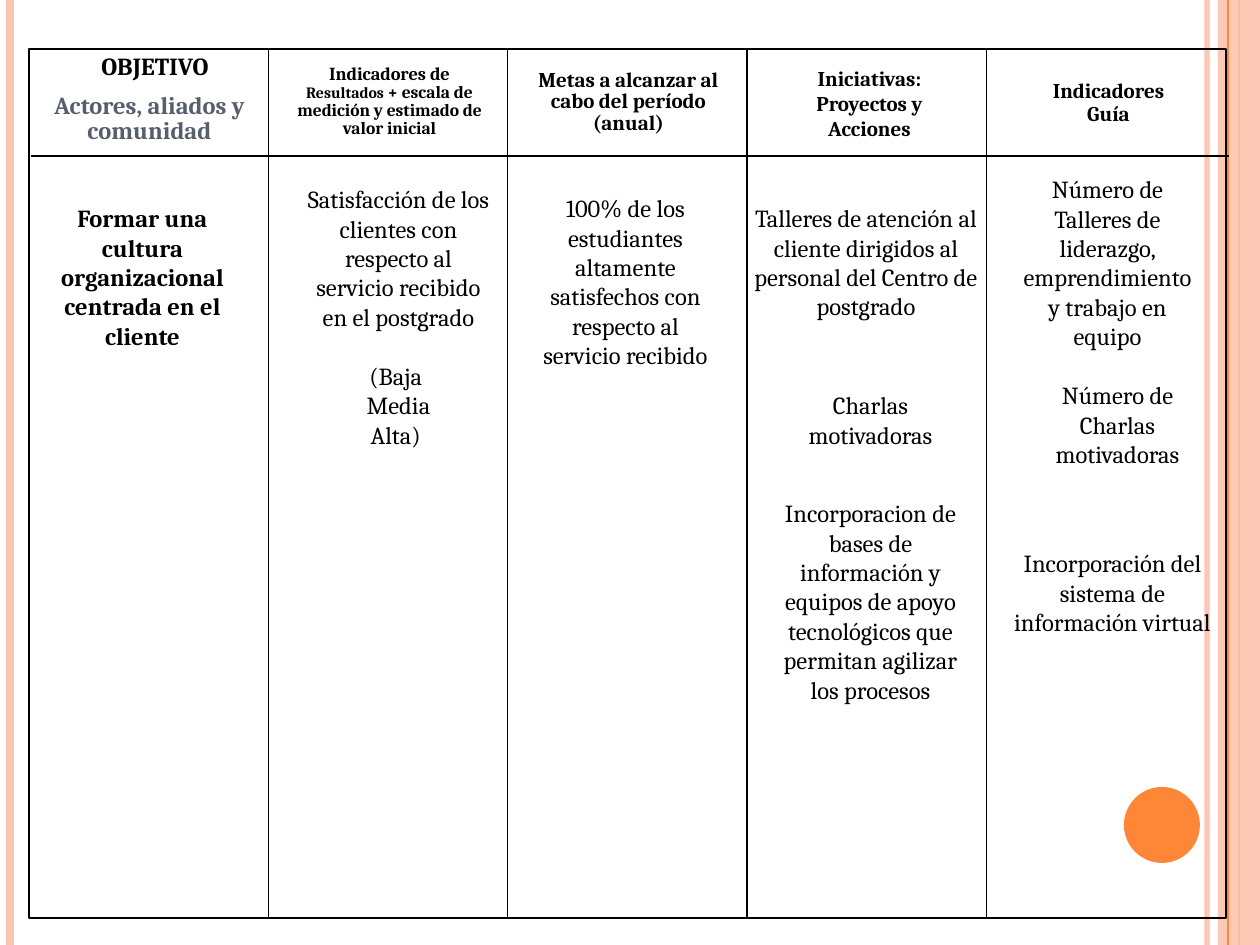
from lxml.etree import SubElement
from pptx import Presentation
from pptx.dml.color import RGBColor
from pptx.enum.shapes import MSO_CONNECTOR as Link, MSO_SHAPE as Shape
from pptx.enum.text import MSO_ANCHOR as Anchor, PP_ALIGN as Align
from pptx.oxml.ns import qn
from pptx.util import Pt

PX = 914400 / 126
WIDE, HIGH = 1260, 945
PEACH = RGBColor(0xFE, 0xC3, 0xAE)
ORANGE = RGBColor(0xFE, 0x86, 0x37)
BLACK = RGBColor(0, 0, 0)
SLATE = RGBColor(0x57, 0x5F, 0x6D)
FONT = "Cambria"

# x, width of each stripe line, colour, opacity
STRIPES = [
    (1207, 3, PEACH, 93),
    (10, 4.5, PEACH, 100),
    (1239, 1.5, ORANGE, 100),
]
COLS, LEFT, TOP, COL_W, COL_H = 5, 29, 49, 239.4, 869

# box, text runs as (text, size), line spacing, colour
HEADS = [
    ((49, 49, 212, 38), [("OBJETIVO", 14)], 0.85, BLACK),
    ((39, 88, 221, 63), [("Actores, aliados y comunidad", 14)], 0.85, SLATE),
    ((284, 48, 211, 107),
     [("Indicadores de ", 10.5), ("Resultados", 9),
      (" + escala de medición y estimado de valor inicial", 10)], 0.85, BLACK),
    ((514, 64, 229, 77),
     [("Metas a alcanzar al cabo del período (anual)", 12)], 0.85, BLACK),
    ((779, 59, 181, 88),
     [("Iniciativas: Proyectos y Acciones", 12)], 1, BLACK),
    ((1018, 74, 181, 58), [("Indicadores Guía", 12)], 0.9, BLACK),
]
GOAL = ((39, 197, 207, 161),
        "Formar una cultura organizacional centrada en el cliente")
SCALE = ["(Baja ", "Media", "Alta) "]
RESULT = ((295, 178, 207, 280),
          "Satisfacción de los clientes con respecto al servicio recibido "
          "en el postgrado")
NOTES = [
    ((522, 187, 207, 190),
     "100% de los estudiantes altamente satisfechos con respecto al "
     "servicio recibido"),
    ((738, 197, 256, 131),
     "Talleres de atención al cliente dirigidos al personal del Centro de "
     "postgrado"),
    ((767, 384, 207, 72), "Charlas motivadoras"),
    ((767, 492, 207, 280),
     "Incorporacion de bases de información y equipos de apoyo "
     "tecnológicos que permitan agilizar los procesos"),
    ((1014, 374, 207, 102), "Número de Charlas motivadoras"),
    ((1004, 168, 207, 220),
     "Número de Talleres de liderazgo, emprendimiento y trabajo en equipo"),
    ((994, 542, 237, 102),
     "Incorporación del sistema de información virtual"),
]


def emu(*sizes):
    return [round(size * PX) for size in sizes]


def fade(fill, alpha):
    """Set the opacity, in percent, of a solid fill in a parent element."""
    tint = fill.find(qn("a:solidFill"))[0]
    SubElement(tint, qn("a:alpha")).set("val", str(alpha * 1000))


def add_line(slide, ends, width, color, alpha=100):
    line = slide.shapes.add_connector(Link.STRAIGHT, *emu(*ends))
    line.line.width = Pt(width)
    line.line.color.rgb = color
    props = line._element.spPr
    if alpha < 100:
        fade(props.find(qn("a:ln")), alpha)
    SubElement(props, qn("a:effectLst"))


def add_form(slide, kind, box, fill=None, alpha=100):
    """Add a filled shape, or a black outline when there is no fill."""
    form = slide.shapes.add_shape(kind, *emu(*box))
    form.shadow.inherit = False
    if fill is None:
        form.fill.background()
        form.line.color.rgb = BLACK
        form.line.width = Pt(0.75)
        return
    form.fill.solid()
    form.fill.fore_color.rgb = fill
    form.line.fill.background()
    if alpha < 100:
        fade(form._element.spPr, alpha)


def add_frame(slide, box, anchor=Anchor.TOP):
    frame = slide.shapes.add_textbox(*emu(*box)).text_frame
    frame.word_wrap = True
    frame.vertical_anchor = anchor
    return frame


def style(para, size, bold=False, color=BLACK):
    para.alignment = Align.CENTER
    para.font.name = FONT
    para.font.size = Pt(size)
    para.font.bold = bold
    para.font.color.rgb = color


def add_head(slide, box, runs, space, color):
    para = add_frame(slide, box, Anchor.MIDDLE).paragraphs[0]
    style(para, runs[0][1], True, color)
    para.line_spacing = space
    for text, size in runs:
        run = para.add_run()
        run.text = text
        if len(runs) > 1:
            run.font.name = FONT
            run.font.size = Pt(size)
            run.font.bold = True
            run.font.color.rgb = color


def add_note(slide, box, text, bold=False):
    frame = add_frame(slide, box)
    frame.text = text
    style(frame.paragraphs[0], 14, bold)
    return frame


def add_scale(frame):
    for i, text in enumerate(SCALE):
        para = frame.add_paragraph()
        para.text = text
        style(para, 14)
        if i == 0:
            para.space_before = Pt(17)


def add_decor(slide):
    for x, width, color, alpha in STRIPES:
        add_line(slide, (x, 0, x, HIGH), width, color, alpha)
    add_form(slide, Shape.RECTANGLE, (1218, 0, 42, HIGH), PEACH, 87)
    add_line(slide, (1228, 0, 1228, HIGH), 0.75, ORANGE)
    add_form(slide, Shape.OVAL, (1124, 787, 76, 76), ORANGE)


def add_grid(slide):
    for col in range(COLS):
        box = (LEFT + col * COL_W, TOP, COL_W, COL_H)
        add_form(slide, Shape.RECTANGLE, box)
    add_line(slide, (31, 156, 1229, 156), 0.75, BLACK)


def main():
    deck = Presentation()
    deck.slide_width, deck.slide_height = emu(WIDE, HIGH)
    slide = deck.slides.add_slide(deck.slide_layouts[6])
    add_decor(slide)
    add_grid(slide)
    for head in HEADS:
        add_head(slide, *head)
    add_note(slide, *GOAL, bold=True)
    add_scale(add_note(slide, *RESULT))
    for note in NOTES:
        add_note(slide, *note)
    deck.save("out.pptx")


if __name__ == "__main__":
    main()
